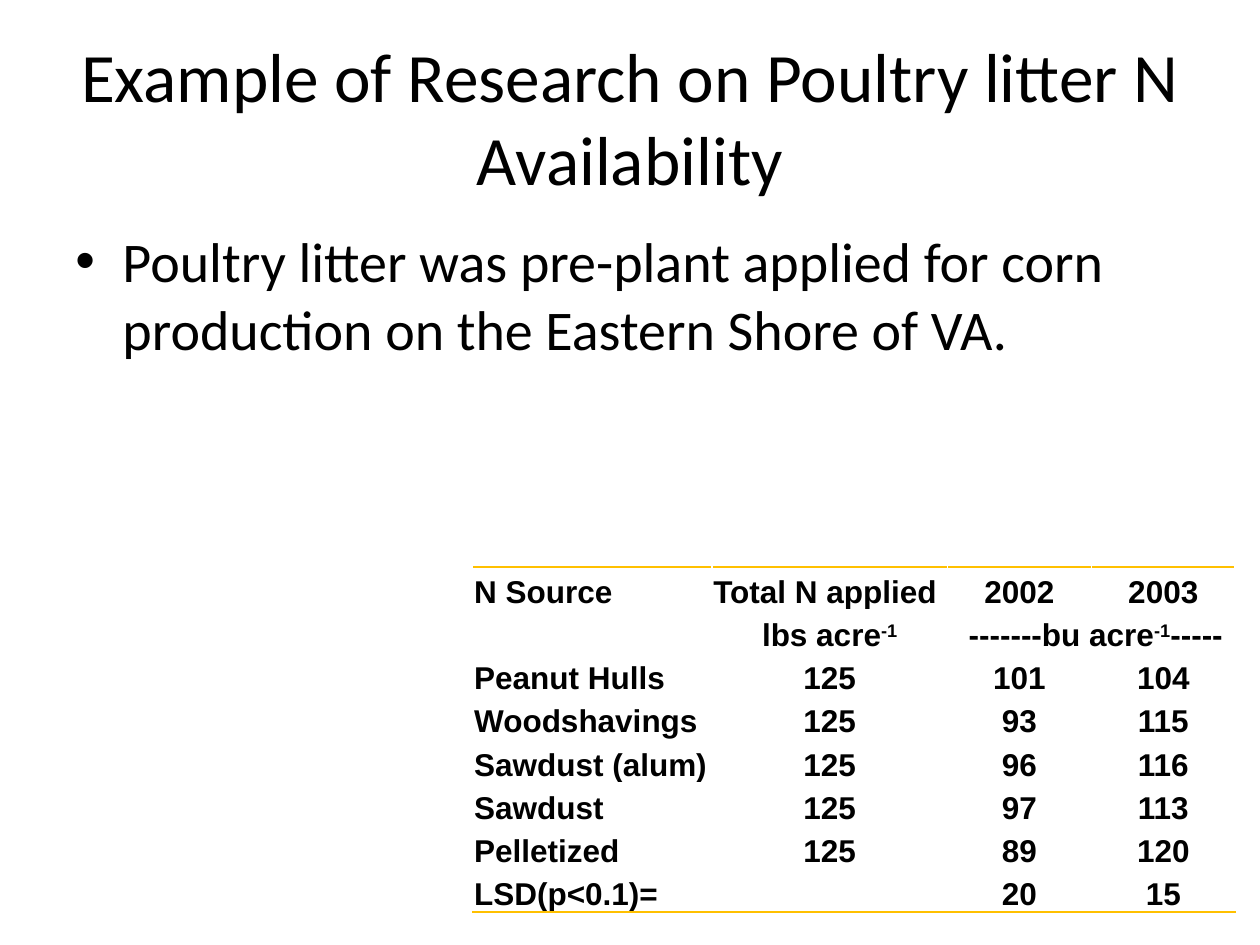
from lxml.etree import SubElement
from pptx import Presentation
from pptx.dml.color import RGBColor as Color
from pptx.enum.text import MSO_ANCHOR as Anchor, PP_ALIGN as Align
from pptx.oxml import parse_xml
from pptx.oxml.ns import nsdecls, qn
from pptx.util import Cm, Pt

COLORS = {"text": "000000", "rule": "FFC000"}
TITLE = "Example of Research on Poultry litter N Availability"
BULLET = "Poultry litter was pre-plant applied for corn production on the Eastern Shore of VA."
SUPERSCRIPT_MARK = "^"
ROWS = [
    ("N Source", "Total N applied", "2002", "2003"),
    ("", "lbs acre^-1", " -------bu acre^-1^-----", ""),
    ("Peanut Hulls", "125", "101", "104"),
    ("Woodshavings", "125", "93", "115"),
    ("Sawdust (alum)", "125", "96", "116"),
    ("Sawdust", "125", "97", "113"),
    ("Pelletized", "125", "89", "120"),
    ("LSD(p<0.1)=", "", "20", "15"),
]
LEFT_ALIGNED = {"Total N applied"}
COLUMN_WIDTHS = [4.82, 4.75, 2.9, 2.9]
ROW_HEIGHT = 0.87


def style(span, font, size, bold=False):
    span.font.name = font
    span.font.size = Pt(size)
    span.font.bold = bold
    span.font.color.rgb = Color.from_string(COLORS["text"])


def add_text(page, text, size, left, top, width, height):
    box = page.shapes.add_textbox(Cm(left), Cm(top), Cm(width), Cm(height))
    box.text_frame.word_wrap = True
    para = box.text_frame.paragraphs[0]
    para.text = text
    style(para.runs[0], "Calibri", size)
    return box, para


def add_bullet(para, indent):
    properties = para._p.get_or_add_pPr()
    properties.set("marL", str(Cm(indent)))
    properties.set("indent", str(-Cm(indent)))
    SubElement(properties, qn("a:buFont")).set("typeface", "Arial")
    SubElement(properties, qn("a:buChar")).set("char", "•")


def add_border(cell, side):
    cell._tc.get_or_add_tcPr().insert(0, parse_xml(
        f'<a:{side} {nsdecls("a")} w="{Pt(1.5)}"><a:solidFill>'
        f'<a:srgbClr val="{COLORS["rule"]}"/></a:solidFill></a:{side}>'))


def fill_cell(cell, text, align):
    cell.fill.background()
    cell.vertical_anchor = Anchor.BOTTOM
    cell.margin_left = cell.margin_right = cell.margin_top = Cm(0.03)
    cell.margin_bottom = 0
    para = cell.text_frame.paragraphs[0]
    para.alignment = align
    if not text:
        return
    for index, part in enumerate(text.split(SUPERSCRIPT_MARK)):
        span = para.add_run()
        span.text = part
        style(span, "Arial", 18, bold=True)
        if index % 2:
            span.font._element.set("baseline", "30000")


def add_yield_table(page):
    frame = page.shapes.add_table(
        len(ROWS), len(COLUMN_WIDTHS), Cm(9.53), Cm(11.43),
        Cm(sum(COLUMN_WIDTHS)), Cm(ROW_HEIGHT * len(ROWS)))
    table = frame.table
    table.first_row = table.horz_banding = False
    for column, width in zip(table.columns, COLUMN_WIDTHS):
        column.width = Cm(width)
    for row_index, texts in enumerate(ROWS):
        table.rows[row_index].height = Cm(ROW_HEIGHT)
        for column_index, text in enumerate(texts):
            cell = table.cell(row_index, column_index)
            is_left = column_index == 0 or text in LEFT_ALIGNED
            fill_cell(cell, text, Align.LEFT if is_left else Align.CENTER)
            if row_index == 0:
                add_border(cell, "lnT")
            elif row_index == len(ROWS) - 1:
                add_border(cell, "lnB")
    table.cell(1, 2).merge(table.cell(1, 3))


def main():
    deck = Presentation()
    deck.slide_width, deck.slide_height = Cm(25.4), Cm(19.05)
    page = deck.slides.add_slide(deck.slide_layouts[6])

    title_box, title = add_text(page, TITLE, 39.6, 1.27, 0.76, 22.86, 3.18)
    title_box.text_frame.vertical_anchor = Anchor.MIDDLE
    title.alignment = Align.CENTER

    _, body = add_text(page, BULLET, 32, 1.27, 4.45, 22.86, 12.57)
    body.space_before = Pt(6.4)
    add_bullet(body, 0.95)

    add_yield_table(page)
    deck.save("out.pptx")


if __name__ == "__main__":
    main()
